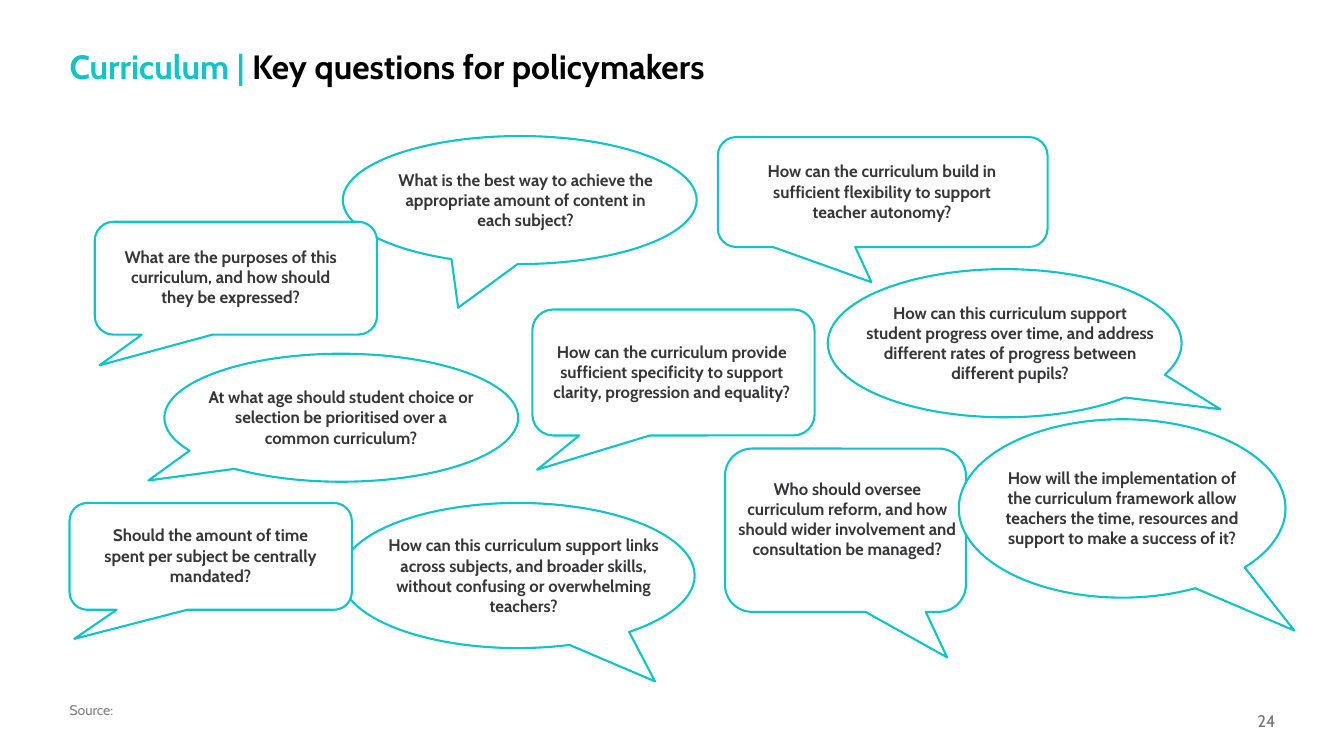
import pptx
import pptx.dml.color
import pptx.enum.shapes
import pptx.enum.text
import pptx.util

Inches = pptx.util.Inches
Pt = pptx.util.Pt
RGBColor = pptx.dml.color.RGBColor
Align = pptx.enum.text.PP_ALIGN
Anchor = pptx.enum.text.MSO_ANCHOR
Preset = pptx.enum.shapes.MSO_SHAPE

FONT = "Cabin"
TEAL = RGBColor(0x10, 0xC4, 0xC8)
WHITE = RGBColor(0xFF, 0xFF, 0xFF)
BLACK = RGBColor(0x00, 0x00, 0x00)
CHARCOAL = RGBColor(0x37, 0x37, 0x3A)
PAGE_GREY = RGBColor(0x76, 0x76, 0x76)
SOURCE_GREY = RGBColor(0x80, 0x80, 0x80)

OVAL = Preset.OVAL_CALLOUT
ROUNDED = Preset.ROUNDED_RECTANGULAR_CALLOUT
LOWER_LEFT = (-0.483, 0.772)

TITLE = [("Curriculum | ", TEAL), ("Key questions for policymakers", BLACK)]
SOURCE = [("Source:", SOURCE_GREY)]
PAGE_NUMBER = [("24", PAGE_GREY)]

QUESTIONS = [
    ("What is the best way to achieve the appropriate amount of content in each subject?",
     OVAL, (3.4, 1.35, 3.51, 1.27), (-0.174, 0.841), (3.75, 1.63, 2.93, 0.71)),
    ("What are the purposes of this curriculum, and how should they be expressed?",
     ROUNDED, (0.94, 2.2, 2.8, 1.12), LOWER_LEFT, (1.11, 2.4, 2.36, 0.71)),
    ("At what age should student choice or selection be prioritised over a common curriculum?",
     OVAL, (1.63, 3.51, 3.51, 1.27), (-0.545, 0.49), (1.92, 3.79, 2.93, 0.71)),
    ("How can the curriculum build in sufficient flexibility to support teacher autonomy?",
     ROUNDED, (7.12, 1.36, 3.27, 1.09), (-0.034, 0.821), (7.37, 1.55, 2.76, 0.71)),
    ("How can the curriculum provide sufficient specificity to support clarity, "
     "progression and equality?",
     ROUNDED, (5.28, 3.07, 2.8, 1.25), LOWER_LEFT, (5.28, 3.34, 2.77, 0.71)),
    ("How can this curriculum support links across subjects, and broader skills, "
     "without confusing or overwhelming teachers?",
     OVAL, (3.38, 4.99, 3.51, 1.44), (0.388, 0.729), (3.73, 5.26, 2.93, 0.91)),
    ("How can this curriculum support student progress over time, and address "
     "different rates of progress between different pupils?",
     OVAL, (8.21, 2.67, 3.51, 1.47), (0.61, 0.446), (8.47, 2.95, 3.1, 0.91)),
    ("Who should oversee curriculum reform, and how should wider involvement and "
     "consultation be managed?",
     ROUNDED, (7.19, 4.45, 2.39, 1.62), (0.422, 0.779), (7.22, 4.7, 2.37, 1.11)),
    ("How will the implementation of the curriculum framework allow teachers the time, "
     "resources and support to make a success of it?",
     OVAL, (9.51, 4.16, 3.24, 1.77), (0.527, 0.684), (9.77, 4.59, 2.72, 0.91)),
    ("Should the amount of time spent per subject be centrally mandated?",
     ROUNDED, (0.69, 4.99, 2.8, 1.06), LOWER_LEFT, (0.91, 5.16, 2.36, 0.71)),
]


def add_text(slide, parts, place, size=12, bold=False, align=Align.LEFT,
             anchor=Anchor.TOP, insets=(0, 0), spacing=None):
    frame = slide.shapes.add_textbox(*map(Inches, place)).text_frame
    frame.word_wrap = True
    frame.vertical_anchor = anchor
    frame.margin_left = frame.margin_right = Inches(insets[0])
    frame.margin_top = frame.margin_bottom = Inches(insets[1])
    paragraph = frame.paragraphs[0]
    paragraph.alignment = align
    if spacing:
        paragraph.line_spacing = spacing
    for words, color in parts:
        run = paragraph.add_run()
        run.text = words
        run.font.name = FONT
        run.font.size = Pt(size)
        run.font.bold = bold
        run.font.color.rgb = color


def add_bubble(slide, outline, place, tail):
    bubble = slide.shapes.add_shape(outline, *map(Inches, place))
    bubble.shadow.inherit = False
    bubble.adjustments[0], bubble.adjustments[1] = tail
    bubble.fill.solid()
    bubble.fill.fore_color.rgb = WHITE
    bubble.line.color.rgb = TEAL
    bubble.line.width = Pt(1.5)


def main():
    deck = pptx.Presentation()
    deck.slide_width, deck.slide_height = Inches(13.33), Inches(7.5)
    slide = deck.slides.add_slide(deck.slide_layouts[6])

    add_text(slide, PAGE_NUMBER, (9.65, 6.95, 3, 0.4), align=Align.RIGHT,
             anchor=Anchor.MIDDLE, insets=(0, 0.05))
    add_text(slide, TITLE, (0.69, 0.5, 11.3, 0.68), size=24, bold=True, spacing=0.9)
    add_text(slide, SOURCE, (0.69, 6.98, 9.88, 0.15), size=10,
             anchor=Anchor.BOTTOM, spacing=0.9)

    for question, outline, bubble_place, tail, text_place in QUESTIONS:
        add_bubble(slide, outline, bubble_place, tail)
        add_text(slide, [(question, CHARCOAL)], text_place, bold=True,
                 align=Align.CENTER, insets=(0.1, 0.05))

    deck.save("out.pptx")


if __name__ == "__main__":
    main()
